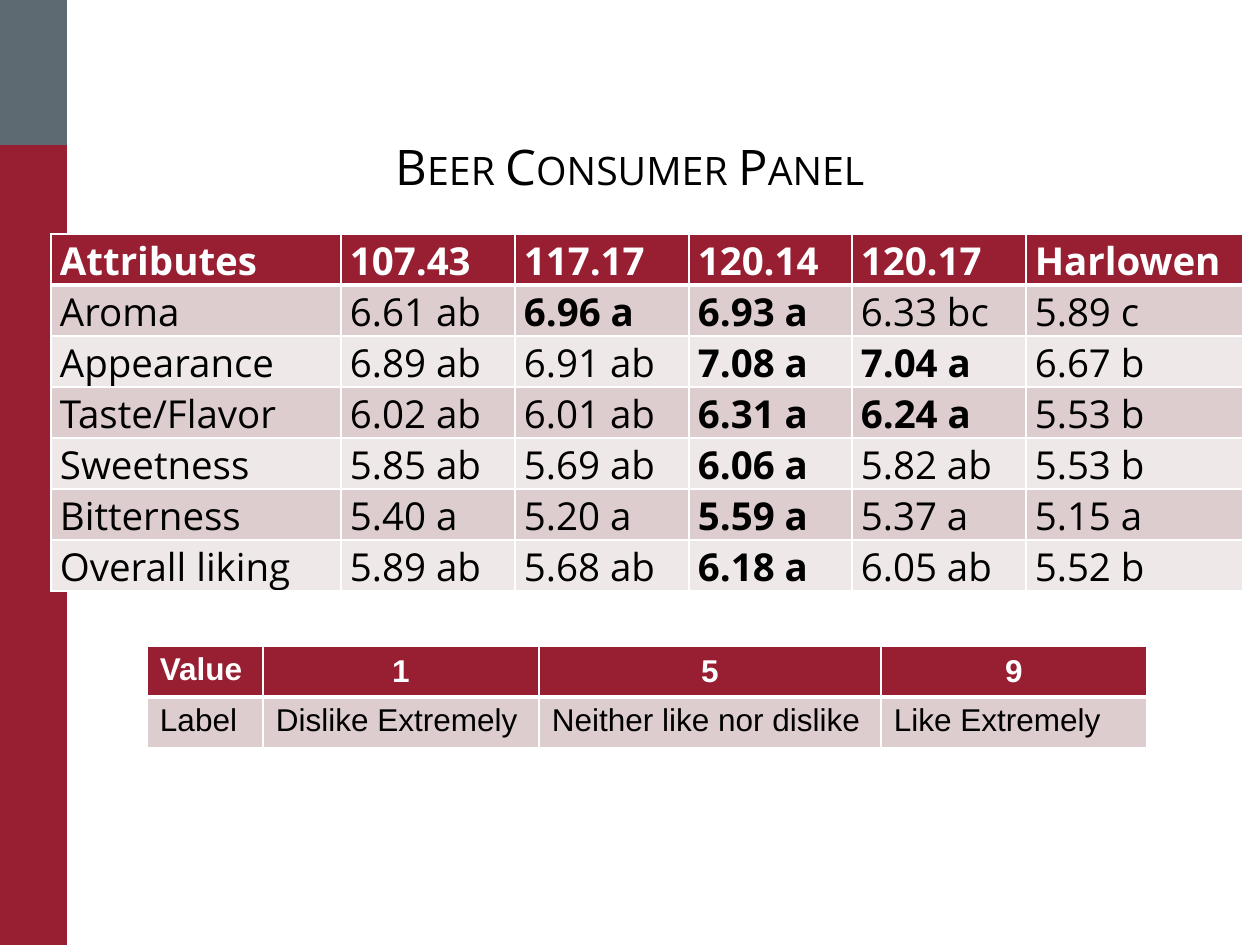
"""Build the beer consumer panel slide with its score table and scale key."""
from lxml.etree import SubElement as Sub
from pptx import Presentation
from pptx.dml.color import RGBColor as RGB
from pptx.enum.shapes import MSO_SHAPE as Kind
from pptx.enum.text import MSO_ANCHOR as Anchor, MSO_AUTO_SIZE as Auto, PP_ALIGN as Align
from pptx.oxml.ns import qn
from pptx.util import Emu, Pt

PX = 914400 / 126
RED, GRAY, WHITE, BLACK = "981E32", "5E6A71", "FFFFFF", "000000"
BANDS = ["EFE8E8", "DDCDCE"]
hue = RGB.from_string


def px(*nums):
    return [Emu(round(n * PX)) for n in nums]


def put(frame, text, size=18, font="Open Sans", color=BLACK, bold=False, align=Align.LEFT):
    para = frame.paragraphs[0]
    para.alignment = align
    run = para.add_run()
    run.text = text
    run.font.size, run.font.name, run.font.bold = Pt(size), font, bold
    run.font.color.rgb = hue(color)
    return run


deck = Presentation()
deck.slide_width, deck.slide_height = px(1260, 945)
slide = deck.slides.add_slide(deck.slide_layouts[5])
shapes = slide.shapes
title = shapes.title

for top, high, color in [(145, 800, RED), (0, 145, GRAY)]:
    bar = shapes.add_shape(Kind.RECTANGLE, *px(0, top, 67, high))
    bar.shadow.inherit = False
    bar.fill.solid()
    bar.fill.fore_color.rgb = hue(color)
    bar.line.fill.background()

title.element.getparent().append(title.element)
title.left, title.top, title.width, title.height = px(0, 135, 1260, 67)
frame = title.text_frame
frame.word_wrap, frame.auto_size = True, Auto.SHAPE_TO_FIT_TEXT
frame.vertical_anchor = Anchor.BOTTOM
frame.margin_left, frame.margin_right = px(63, 63)
frame.margin_top, frame.margin_bottom = px(6, 6)
run = put(frame, "Beer Consumer Panel", size=28, align=Align.CENTER)
run._r.get_or_add_rPr().set("cap", "small")
frame.paragraphs[0].line_spacing = 0.9

scores = [
    ["Attributes", "107.43", "117.17", "120.14", "120.17", "Harlowen"],
    ["Aroma", "6.61 ab", "6.96 a", "6.93 a", "6.33 bc", "5.89 c"],
    ["Appearance", "6.89 ab", "6.91 ab", "7.08 a", "7.04 a", "6.67 b"],
    ["Taste/Flavor", "6.02 ab", "6.01 ab", "6.31 a", "6.24 a", "5.53 b"],
    ["Sweetness", "5.85 ab", "5.69 ab", "6.06 a", "5.82 ab", "5.53 b"],
    ["Bitterness", "5.40 a", "5.20 a", "5.59 a", "5.37 a", "5.15 a"],
    ["Overall liking", "5.89 ab", "5.68 ab", "6.18 a", "6.05 ab", "5.52 b"],
]
scale = [
    ["Value", "1", "5", "9"],
    ["Label", "Dislike Extremely", "Neither like nor dislike", "Like Extremely"],
]
best = {"6.96 a", "6.93 a", "7.08 a", "7.04 a", "6.31 a", "6.24 a", "6.06 a", "5.59 a", "6.18 a"}
grids = [
    (scores, 51, 234, [290, 174, 174, 163, 174, 217], 22, "Open Sans", (9, 0), False),
    (scale, 147, 646, [116, 276, 342, 266], 18, "Arial", (13, 6), True),
]

for rows, left, top, wide, size, font, (side, edge), center in grids:
    area = px(left, top, sum(wide), 51 * len(rows))
    table = shapes.add_table(len(rows), len(wide), *area).table
    for col, width in zip(table.columns, px(*wide)):
        col.width = width
    for r, row in enumerate(rows):
        table.rows[r].height = px(51)[0]
        head = r == 0
        for c, text in enumerate(row):
            cell = table.cell(r, c)
            cell.margin_left, cell.margin_right = px(side, side)
            cell.margin_top, cell.margin_bottom = px(edge, edge)
            mid = center and head and c > 0
            cell.vertical_anchor = Anchor.MIDDLE if mid else Anchor.TOP
            put(cell.text_frame, text, size=size, font=font,
                color=WHITE if head else BLACK, bold=head or text in best,
                align=Align.CENTER if mid else Align.LEFT)
            props = cell._tc.get_or_add_tcPr()
            for tag in "LRTB":
                thick = (r, tag) in [(0, "B"), (1, "T")]
                line = Sub(props, qn(f"a:ln{tag}"), w=str(Pt(3 if thick else 1)))
                Sub(Sub(line, qn("a:solidFill")), qn("a:srgbClr"), val=WHITE)
            cell.fill.solid()
            cell.fill.fore_color.rgb = hue(RED if head else BANDS[r % 2])

deck.save("out.pptx")
